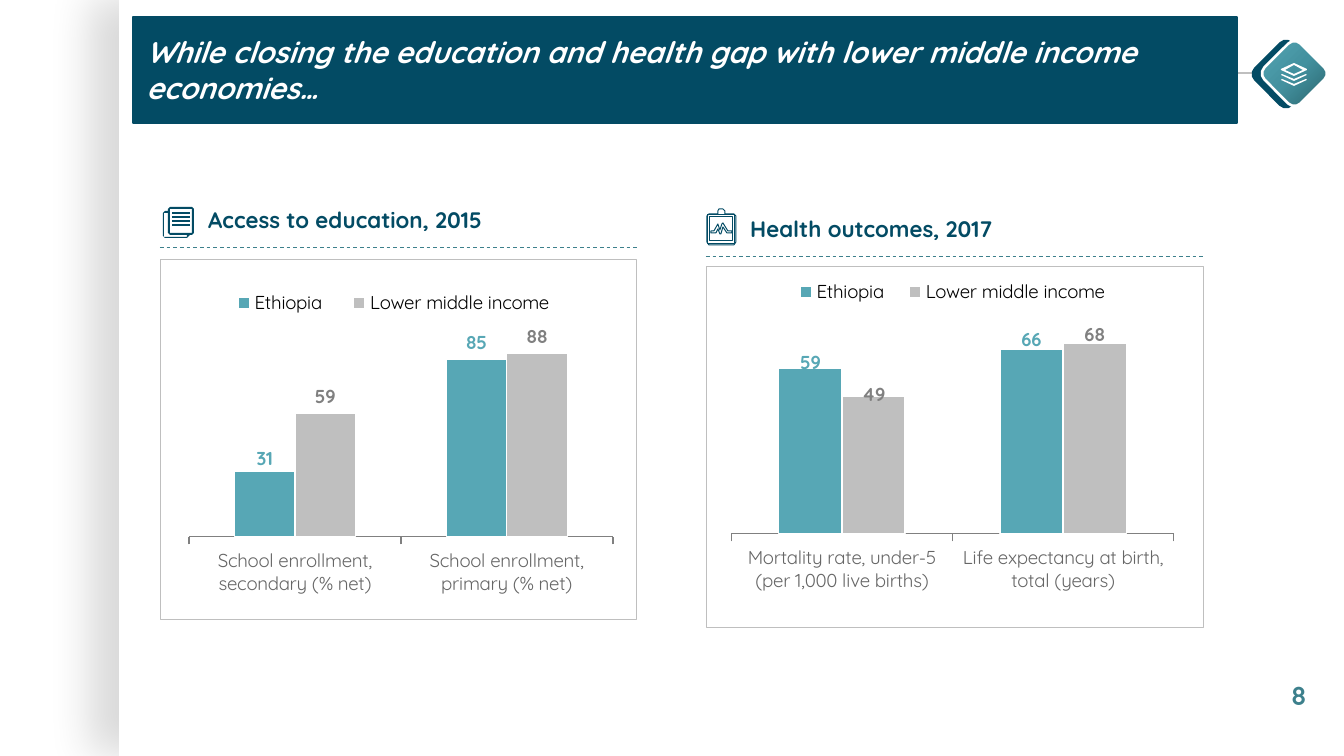
from dataclasses import dataclass

import pptx
import pptx.chart.data
import pptx.dml.color
import pptx.enum.chart
import pptx.enum.dml
import pptx.enum.shapes
import pptx.enum.text
import pptx.oxml
import pptx.oxml.ns
import pptx.util

PX = 914400 / 134.4
FONT = "Quicksand"
COLORS = {"navy": "034B64", "teal": "57A7B5", "mid": "3D808C", "silver": "BFBFBF",
          "gray": "808080", "label": "666666", "white": "FFFFFF", "black": "000000"}
STOPS = [(0, "2F666F"), (26, "377B86"), (50, "43919F"), (100, "57A7B5")]
SHAPE = pptx.enum.shapes.MSO_SHAPE
qn = pptx.oxml.ns.qn

Points = list[tuple[int, int]]
Box = tuple[int, int, int, int]
Layout = tuple[float, float, float, float]


@dataclass
class Series:
    name: str
    values: list[int]
    fill: str
    label: str
    nudges: dict[int, float]


@dataclass
class Panel:
    heading: str
    heading_box: Box
    rule_y: int
    box: Box
    categories: list[str]
    series: list[Series]
    maximum: int
    axis_pt: float
    plot: Layout
    legend: Layout


PANELS = [
    Panel("Health outcomes, 2017", (737, 209, 277, 40), 257, (706, 266, 498, 362),
          ["Mortality rate, under-5 (per 1,000 live births)",
           "Life expectancy at birth, total (years)"],
          [Series("Ethiopia", [59, 66], "teal", "teal", {0: 0.03, 1: 0.02}),
           Series("Lower middle income", [49, 68], "silver", "gray", {0: 0.04, 1: 0.02})],
          80, 0.75, (0.05, 0.12, 0.89, 0.62), (0.15, 0.03, 0.69, 0.08)),
    Panel("Access to education, 2015", (195, 200, 317, 40), 248, (160, 259, 477, 361),
          ["School enrollment, secondary (% net)", "School enrollment, primary (% net)"],
          [Series("Ethiopia", [31, 85], "teal", "teal", {0: 0.01}),
           Series("Lower middle income", [59, 88], "silver", "gray", {})],
          100, 1, (0.06, 0.19, 0.89, 0.58), (0.11, 0.08, 0.76, 0.08)),
]

CLIPBOARD = [
    [(709, 214), (718, 214), (718, 211), (719, 209), (723, 209), (725, 211), (725, 214),
     (734, 214), (736, 216), (736, 242), (734, 245), (709, 245), (707, 242), (707, 216)],
    [(708, 215), (735, 215), (735, 244), (708, 244)],
    [(710, 217), (733, 217), (733, 241), (710, 241)],
    [(711, 231), (714, 231), (718, 224), (720, 230), (722, 224), (723, 223), (728, 231),
     (732, 231), (732, 233), (727, 233), (723, 227), (721, 234), (720, 234), (718, 229),
     (716, 233), (711, 233)],
]
PAGES = [
    [(170, 207), (192, 207), (194, 209), (194, 233), (192, 235), (190, 235), (187, 238),
     (165, 238), (163, 236), (163, 213), (165, 211), (168, 211), (168, 209)],
    [(164, 213), (168, 213), (168, 233), (170, 235), (187, 235), (187, 237), (164, 237)],
    [(170, 209), (192, 209), (192, 233), (170, 233)],
]
TOP_LAYER = [
    [(1294, 63), (1307, 69), (1307, 70), (1294, 76), (1281, 70), (1281, 69)],
    [(1294, 65), (1303, 70), (1294, 74), (1285, 70)],
]


def px(n: float) -> int:
    return round(n * PX)


def rgb(name: str):
    return pptx.dml.color.RGBColor.from_string(COLORS[name])


def xml(body: str):
    tag, rest = body[1:].split(" ", 1)
    return pptx.oxml.parse_xml(f"<{tag} {pptx.oxml.ns.nsdecls('a', 'c')} {rest}")


def style_font(font, size, color, bold=False, italic=False, name=FONT):
    font.name, font.size = name, pptx.util.Pt(size)
    font.bold, font.italic = bold, italic
    font.color.rgb = rgb(color)


def write(sp, text, **fmt):
    p = sp.text_frame.paragraphs[0]
    p.alignment = pptx.enum.text.PP_ALIGN.LEFT
    r = p.add_run()
    r.text = text
    style_font(r.font, **fmt)


def paint(sp, fill=None, line=None, width=0.5):
    if fill:
        sp.fill.solid()
        sp.fill.fore_color.rgb = rgb(fill)
    else:
        sp.fill.background()
    if line:
        sp.line.color.rgb = rgb(line)
        sp.line.width = pptx.util.Pt(width)
    else:
        sp.line.fill.background()


def add_shape(s, kind, box: Box, **look):
    sp = s.shapes.add_shape(kind, *map(px, box))
    sp.shadow.inherit = False
    paint(sp, **look)
    return sp


def add_label(s, box: Box, text: str, **fmt):
    sp = s.shapes.add_textbox(*map(px, box))
    sp.text_frame.word_wrap = False
    sp.text_frame.auto_size = pptx.enum.text.MSO_AUTO_SIZE.SHAPE_TO_FIT_TEXT
    write(sp, text, **fmt)


def add_line(s, x1: int, x2: int, y: int, color: str, width: float, dashed=False):
    ln = s.shapes.add_connector(pptx.enum.shapes.MSO_CONNECTOR.STRAIGHT,
                                px(x1), px(y), px(x2), px(y))
    ln.line.color.rgb = rgb(color)
    ln.line.width = pptx.util.Pt(width)
    if dashed:
        ln.line.dash_style = pptx.enum.dml.MSO_LINE.DASH
    ln._element.spPr.append(xml("<a:effectLst />"))


def add_icon(s, contours: list[Points], **look):
    fb = s.shapes.build_freeform(*contours[0][0], scale=PX)
    fb.add_line_segments(contours[0][1:])
    for contour in contours[1:]:
        fb.move_to(*contour[0])
        fb.add_line_segments(contour[1:])
    sp = fb.convert_to_shape()
    sp.shadow.inherit = False
    paint(sp, **look)


def manual_layout(values: Layout, inner=False):
    target = '<c:layoutTarget val="inner"/>' if inner else ""
    parts = "".join(f'<c:{k} val="{v}"/>' for k, v in zip("xywh", values))
    return xml(f'<c:layout ><c:manualLayout>{target}<c:xMode val="edge"/>'
               f'<c:yMode val="edge"/>{parts}</c:manualLayout></c:layout>')


def clear_layout(parent):
    for old in parent.findall(qn("c:layout")):
        parent.remove(old)


def add_chart(s, panel: Panel):
    data = pptx.chart.data.CategoryChartData()
    data.categories = panel.categories
    for item in panel.series:
        data.add_series(item.name, item.values)
    ch = s.shapes.add_chart(pptx.enum.chart.XL_CHART_TYPE.COLUMN_CLUSTERED,
                            *map(px, panel.box), data).chart
    ch.has_title = False
    style_font(ch.font, 12, "black", name="Karla")
    ch._chartSpace.find(qn("c:txPr")).addprevious(xml(
        '<c:spPr ><a:noFill/><a:ln w="6350"><a:solidFill>'
        f'<a:srgbClr val="{COLORS["silver"]}"/></a:solidFill></a:ln></c:spPr>'))

    plot_area = ch._chartSpace.chart.plotArea
    clear_layout(plot_area)
    plot_area.insert(0, manual_layout(panel.plot, inner=True))
    ch.has_legend = True
    ch.legend.position = pptx.enum.chart.XL_LEGEND_POSITION.TOP
    ch.legend.include_in_layout = False
    style_font(ch.legend.font, 10, "black")
    legend = ch.legend._element
    clear_layout(legend)
    legend.find(qn("c:legendPos")).addnext(manual_layout(panel.legend))

    axis = ch.category_axis
    style_font(axis.tick_labels.font, 10, "label")
    axis.major_tick_mark = pptx.enum.chart.XL_TICK_MARK.OUTSIDE
    axis.format.line.color.rgb = rgb("gray")
    axis.format.line.width = pptx.util.Pt(panel.axis_pt)
    axis = ch.value_axis
    axis.minimum_scale, axis.maximum_scale, axis.major_unit = 0, panel.maximum, 20
    axis.has_major_gridlines = False
    axis.visible = False

    plot = ch.plots[0]
    plot.gap_width, plot.overlap, plot.vary_by_categories = 150, 0, False
    outside = pptx.enum.chart.XL_LABEL_POSITION.OUTSIDE_END
    for item, series in zip(panel.series, plot.series):
        paint(series.format, fill=item.fill, line="white", width=0.75)
        labels = series.data_labels
        labels.show_value = True
        labels.number_format, labels.number_format_is_linked = "#,##0", False
        labels.position = outside
        style_font(labels.font, 10, item.label, bold=True)
        for i in item.nudges:
            label = series.points[i].data_label
            label.position = outside
            style_font(label.font, 10, item.label, bold=True)
        for mark, dy in zip(series._element.iter(qn("c:dLbl")), item.nudges.values()):
            mark.find(qn("c:idx")).addnext(xml(
                f'<c:layout ><c:manualLayout><c:x val="0"/><c:y val="{dy}"/>'
                '</c:manualLayout></c:layout>'))


def add_title(s):
    sp = s.shapes.title
    s.shapes._spTree.append(sp._element)
    sp.left, sp.top, sp.width, sp.height = map(px, (133, 17, 1104, 106))
    sp._element.spPr.append(xml('<a:prstGeom prst="roundRect"><a:avLst>'
                                '<a:gd name="adj" fmla="val 4600"/></a:avLst></a:prstGeom>'))
    paint(sp, fill="navy", line="navy", width=1.5)
    tf = sp.text_frame
    tf.word_wrap = True
    tf.auto_size = pptx.enum.text.MSO_AUTO_SIZE.NONE
    tf.vertical_anchor = pptx.enum.text.MSO_ANCHOR.MIDDLE
    write(sp, "While closing the education and health gap with lower middle income economies…",
          size=16, color="white", bold=True, italic=True)


def add_badge(s):
    add_shape(s, SHAPE.ROUNDED_RECTANGLE, (1259, 47, 54, 54), fill="navy").rotation = 315
    sp = add_shape(s, SHAPE.ROUNDED_RECTANGLE, (1269, 48, 51, 51),
                   fill="teal", line="white", width=1.42)
    sp.rotation = 315
    stops = "".join(f'<a:gs pos="{pos * 1000}"><a:srgbClr val="{c}"/></a:gs>' for pos, c in STOPS)
    spPr = sp._element.spPr
    spPr.replace(spPr.find(qn("a:solidFill")), xml(
        f'<a:gradFill rotWithShape="1"><a:gsLst>{stops}</a:gsLst><a:path path="circle">'
        '<a:fillToRect l="100000" t="100000"/></a:path></a:gradFill>'))
    add_icon(s, TOP_LAYER, fill="white")
    for y in (79, 74):
        add_icon(s, [[(1282, y), (1294, y + 5), (1306, y), (1307, y + 1),
                      (1294, y + 7), (1281, y + 1)]], fill="white")


def main():
    prs = pptx.Presentation()
    prs.slide_width, prs.slide_height = px(1344), px(756)
    s = prs.slides.add_slide(prs.slide_layouts[5])

    page = add_shape(s, SHAPE.RECTANGLE, (119, 0, 1225, 756), fill="white")
    page._element.spPr.find(qn("a:effectLst")).append(xml(
        '<a:outerShdw blurRad="285750" dist="190500" dir="10800000" algn="r" rotWithShape="0">'
        '<a:srgbClr val="000000"><a:alpha val="15000"/></a:srgbClr></a:outerShdw>'))
    add_line(s, 1184, 1292, 73, "silver", 0.75)
    add_title(s)
    add_label(s, (1278, 673, 42, 46), "8", size=14, color="mid", bold=True)

    for panel in PANELS:
        add_chart(s, panel)
        left, _, width, _ = panel.box
        add_line(s, left, left + width, panel.rule_y, "mid", 0.5, dashed=True)
        add_label(s, panel.heading_box, panel.heading, size=12, color="navy", bold=True)

    add_icon(s, CLIPBOARD, line="navy")
    add_icon(s, PAGES, fill="navy")
    for y in range(212, 228, 4):
        add_icon(s, [[(172, y), (190, y), (190, y + 2), (172, y + 2)]], fill="navy")
    add_badge(s)
    prs.save("out.pptx")


if __name__ == "__main__":
    main()
